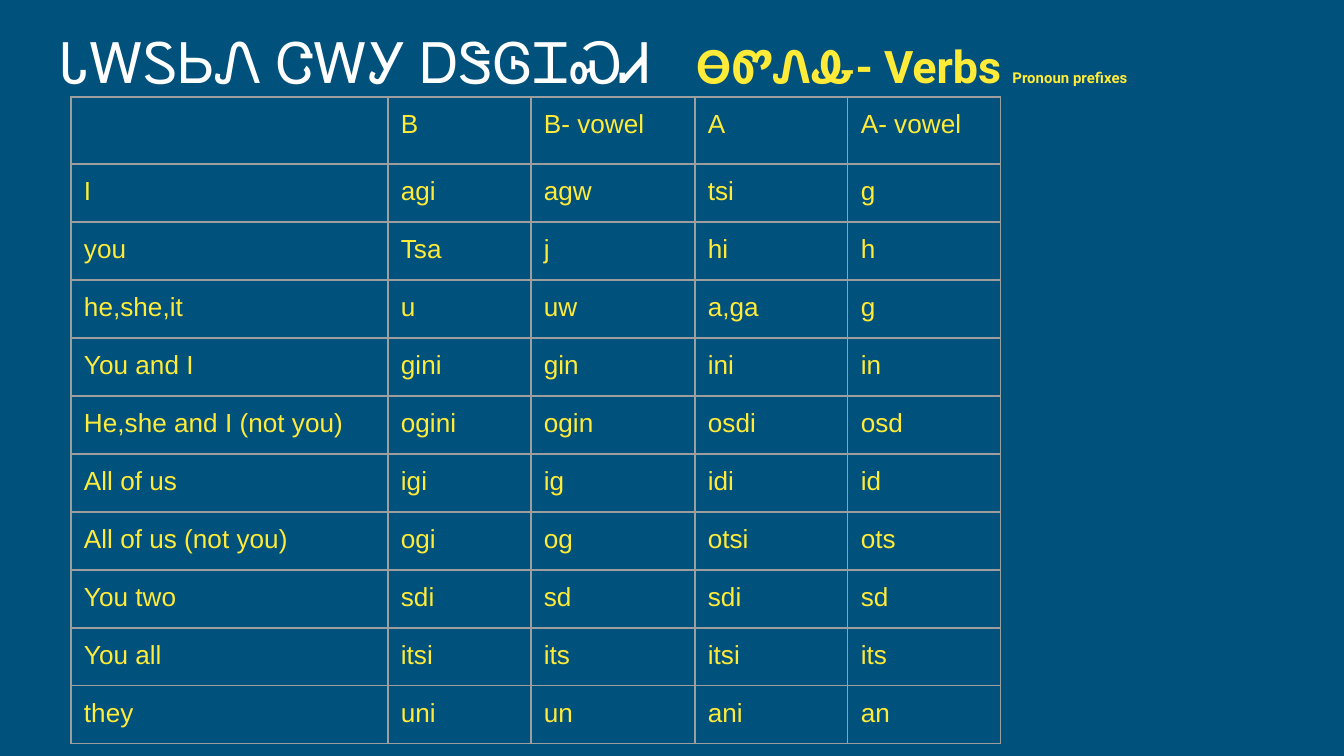
from lxml import etree
from pptx import Presentation
from pptx import util as u
from pptx.dml.color import RGBColor
from pptx.enum import text
from pptx.oxml import ns

EMU_PER_PX = 914400 / 134.4
SLIDE_BOX = (0, 0, 1344, 756)
INSET = 13

BLUE = RGBColor(0x00, 0x51, 0x7C)
WHITE = RGBColor(0xFF, 0xFF, 0xFF)
YELLOW = RGBColor(0xFF, 0xEB, 0x38)
GREY = RGBColor(0x9E, 0x9E, 0x9E)

COLUMN_WIDTHS = (317, 143, 164, 153, 153)
HEADER_HEIGHT, ROW_HEIGHT = 67, 58
PREFIXES = (
    ("", "B", "B- vowel", "A", "A- vowel"),
    ("I", "agi", "agw", "tsi", "g"),
    ("you", "Tsa", "j", "hi", "h"),
    ("he,she,it", "u", "uw", "a,ga", "g"),
    ("You and I", "gini", "gin", "ini", "in"),
    ("He,she and I (not you)", "ogini", "ogin", "osdi", "osd"),
    ("All of us", "igi", "ig", "idi", "id"),
    ("All of us (not you)", "ogi", "og", "otsi", "ots"),
    ("You two", "sdi", "sd", "sdi", "sd"),
    ("You all", "itsi", "its", "itsi", "its"),
    ("they", "uni", "un", "ani", "an"),
)


def px(length):
    return u.Emu(round(length * EMU_PER_PX))


def add_run(paragraph, words, *, size, font, color=YELLOW, bold=False):
    run = paragraph.add_run()
    run.text = words
    run.font.size = u.Pt(size)
    run.font.name = font
    run.font.bold = bold
    run.font.color.rgb = color


def set_insets(target):
    """Give a text frame or a table cell the same margin on every side."""
    target.margin_left = target.margin_right = px(INSET)
    target.margin_top = target.margin_bottom = px(INSET)


def add_text_box(slide, box, anchor):
    frame = slide.shapes.add_textbox(*map(px, box)).text_frame
    frame.word_wrap = True
    frame.vertical_anchor = anchor
    set_insets(frame)
    return frame.paragraphs[0]


def add_heading(slide, box):
    left, top, width, height = box
    title = add_text_box(slide, (left, top, width, height), text.MSO_ANCHOR.BOTTOM)
    add_run(title, "ᏓᎳᏚᏏᏁ ᏣᎳᎩ ᎠᏕᎶᏆᏍᏗ", size=30, font="Roboto Slab", color=WHITE)

    topic = add_text_box(slide, (left + 635, top + 19, 577, 82), text.MSO_ANCHOR.TOP)
    add_run(topic, "ᎾᏛᏁᎲ- Verbs ", size=24, font="Roboto", bold=True)
    add_run(topic, "Pronoun prefixes", size=8, font="Roboto", bold=True)


def set_borders(cell):
    properties = cell._tc.get_or_add_tcPr()
    for position, side in enumerate(("a:lnL", "a:lnR", "a:lnT", "a:lnB")):
        line = etree.Element(ns.qn(side), w=str(u.Pt(0.75)))
        fill = etree.SubElement(line, ns.qn("a:solidFill"))
        etree.SubElement(fill, ns.qn("a:srgbClr"), val=str(GREY))
        properties.insert(position, line)


def add_prefix_table(slide, box):
    table = slide.shapes.add_table(
        len(PREFIXES), len(COLUMN_WIDTHS), *map(px, box)
    ).table
    table.first_row = table.horz_banding = False
    for column, width in zip(table.columns, COLUMN_WIDTHS):
        column.width = px(width)
    for index, (row, entries) in enumerate(zip(table.rows, PREFIXES)):
        row.height = px(ROW_HEIGHT if index else HEADER_HEIGHT)
        for cell, entry in zip(row.cells, entries):
            cell.fill.background()
            set_insets(cell)
            set_borders(cell)
            if entry:
                add_run(cell.text_frame.paragraphs[0], entry, size=14, font="Arial")


def add_verb_slide(presentation, box):
    left, top, width, height = box
    slide = presentation.slides.add_slide(presentation.slide_layouts[6])
    slide.background.fill.solid()
    slide.background.fill.fore_color.rgb = BLUE
    add_heading(slide, (left + 48, top + 7, width - 114, 101))
    table_height = HEADER_HEIGHT + ROW_HEIGHT * (len(PREFIXES) - 1)
    add_prefix_table(slide, (left + 71, top + 97, sum(COLUMN_WIDTHS), table_height))


def main():
    presentation = Presentation()
    presentation.slide_width, presentation.slide_height = map(px, SLIDE_BOX[2:])
    add_verb_slide(presentation, SLIDE_BOX)
    presentation.save("out.pptx")


if __name__ == "__main__":
    main()
